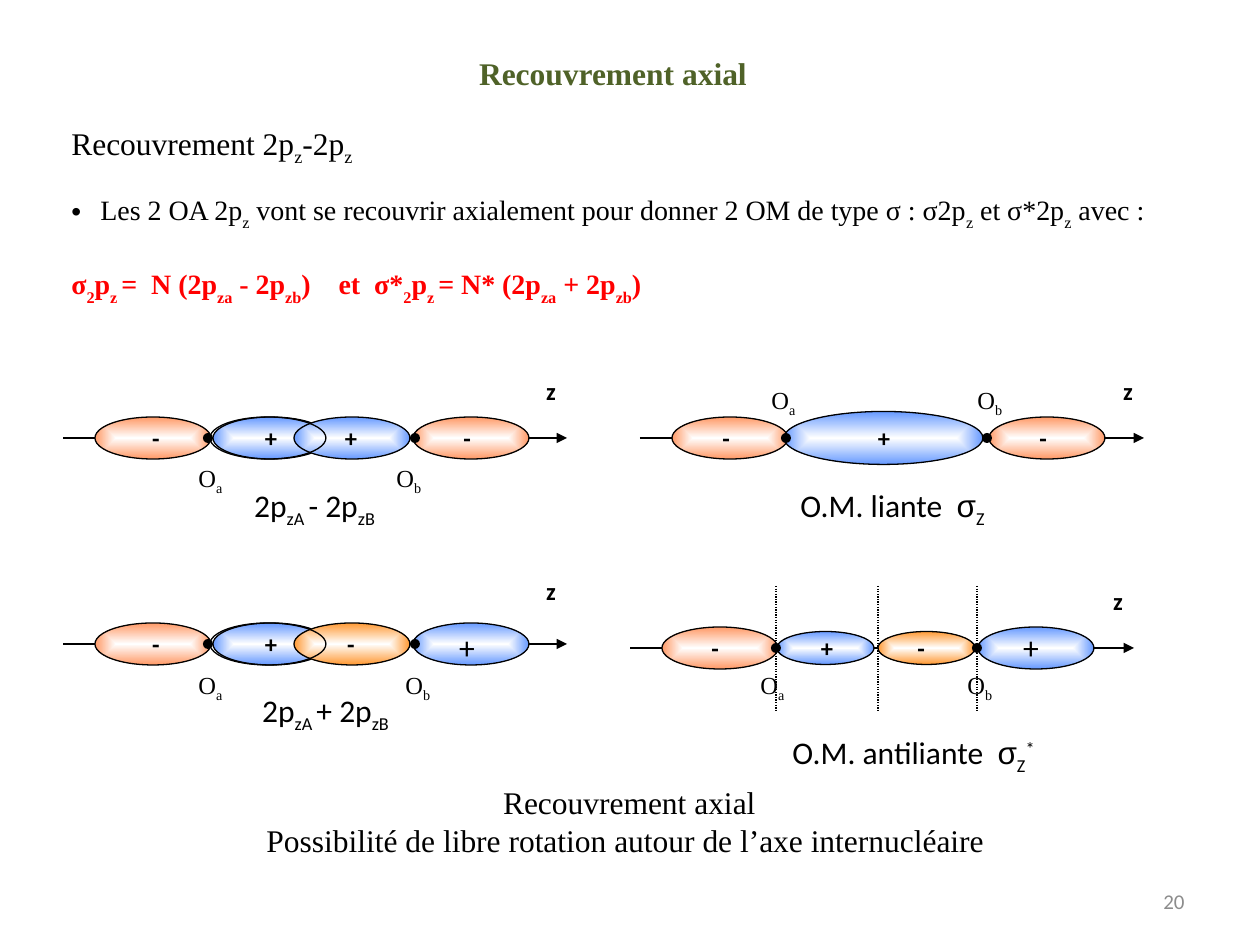
from lxml import etree
from pptx import Presentation
from pptx.dml.color import RGBColor
from pptx.enum.dml import MSO_LINE
from pptx.enum.shapes import MSO_CONNECTOR, MSO_SHAPE
from pptx.enum.text import MSO_ANCHOR, PP_ALIGN
from pptx.oxml.ns import qn
from pptx.util import Pt

PX = 914400 / 126
OVAL = MSO_SHAPE.OVAL
STRAIGHT = MSO_CONNECTOR.STRAIGHT
DOTTED = MSO_LINE.ROUND_DOT
LEFT, CENTER, RIGHT = PP_ALIGN.LEFT, PP_ALIGN.CENTER, PP_ALIGN.RIGHT
TOP, MIDDLE = MSO_ANCHOR.TOP, MSO_ANCHOR.MIDDLE
SERIF, SANS, GREEK = "Times New Roman", "Calibri", "Arial"
COLORS = {
    "black": "000000", "white": "FFFFFF", "title": "4F6228", "formula": "FF0000",
    "page number": "8C8C8C", "blue": "6699FF", "salmon": "FF9966", "orange": "FF9933",
}
AXIS_LENGTH = 504
LOBE = (116, 42)
SMALL_LOBE = (97, 33)
BONDING_LOBE = (199, 53)


def px(*lengths):
    return [round(length * PX) for length in lengths]


def rgb(name):
    return RGBColor.from_string(COLORS[name])


def with_subscripts(text, base=-25):
    """Split text at each bar into spans that alternate between normal and subscript."""
    return [(part, base if i % 2 else 0, None) for i, part in enumerate(text.split("|"))]


def fill_paragraph(para, spans, size, font=SERIF, color="black", bold=False, align=LEFT):
    para.alignment = align
    para.font.name = font
    para.font.size = Pt(size)
    para.font.bold = bold
    para.font.color.rgb = rgb(color)
    for text, base, own_font in spans:
        span = para.add_run()
        span.text = text
        if base:
            span.font._element.set("baseline", str(base * 1000))
        if own_font:
            span.font.name = own_font


def add_frame(shapes, place, wrap=True, anchor=TOP, side_inset=None):
    frame = shapes.add_textbox(*px(*place)).text_frame
    frame.word_wrap = wrap
    frame.vertical_anchor = anchor
    if side_inset is not None:
        frame.margin_left = frame.margin_right = side_inset
    return frame


def add_text(shapes, place, text, size, wrap=True, anchor=TOP, **style):
    """Add a one-paragraph box; text is a string with subscript bars or a list of spans."""
    frame = add_frame(shapes, place, wrap, anchor)
    spans = with_subscripts(text) if isinstance(text, str) else text
    fill_paragraph(frame.paragraphs[0], spans, size, **style)


def add_sign(shapes, center, top, text, size=14, bold=True):
    frame = add_frame(shapes, (center - 16, top, 32, 42), side_inset=0)
    fill_paragraph(frame.paragraphs[0], [(text, 0, None)], size, SANS, bold=bold, align=CENTER)


def add_ellipse(shapes, left, middle, size):
    width, height = size
    ellipse = shapes.add_shape(OVAL, *px(left, middle - height / 2, width, height))
    ellipse.shadow.inherit = False
    ellipse.line.color.rgb = rgb("black")
    ellipse.line.width = Pt(0.75)
    return ellipse


def add_lobe(shapes, left, middle, size, color):
    """Add an orbital lobe, white at its centre; without a color it is an outline."""
    lobe = add_ellipse(shapes, left, middle, size)
    if color is None:
        lobe.fill.background()
        return
    lobe.fill.gradient()
    for stop, name in zip(lobe.fill.gradient_stops, ("white", color)):
        stop.color.rgb = rgb(name)
    gradient = lobe._element.spPr.find(qn("a:gradFill"))
    gradient.remove(gradient.find(qn("a:lin")))
    shade = etree.SubElement(gradient, qn("a:path"), path="shape")
    etree.SubElement(shade, qn("a:fillToRect"), l="50000", t="50000", r="50000", b="50000")


def add_nucleus(shapes, center, middle):
    nucleus = add_ellipse(shapes, center - 5, middle, (10, 10))
    nucleus.fill.solid()
    nucleus.fill.fore_color.rgb = rgb("black")
    nucleus.line.fill.background()


def add_line(shapes, start, end, dash=None, arrow=False):
    connector = shapes.add_connector(STRAIGHT, *px(*start, *end))
    connector.line.color.rgb = rgb("black")
    connector.line.width = Pt(0.75)
    properties = connector._element.spPr
    if dash:
        connector.line.dash_style = dash
    if arrow:
        etree.SubElement(properties.find(qn("a:ln")), qn("a:tailEnd"), type="triangle")
    etree.SubElement(properties, qn("a:effectLst"))


def add_diagram(page, origin, lobes, nuclei, signs, caption_place, caption,
                big_plus=None, nodes=(), z_rise=68):
    """Draw orbitals along a z axis; horizontal positions count from the axis start."""
    left, middle = origin
    shapes = page.shapes.add_group_shape().shapes
    add_line(shapes, origin, (left + AXIS_LENGTH, middle), arrow=True)
    for offset, size, color in lobes:
        add_lobe(shapes, left + offset, middle, size, color)
    for offset in nuclei:
        add_nucleus(shapes, left + offset, middle)
    for offset, sign in signs:
        add_sign(shapes, left + offset, middle - 21, sign)
    if big_plus:
        offset, rise = big_plus
        add_sign(shapes, left + offset, middle - rise, "+", size=18, bold=False)
    for offset in nodes:
        add_line(shapes, (left + offset, middle - 62), (left + offset, middle + 64), DOTTED)
    add_sign(shapes, left + 488, middle - z_rise, "z")
    add_text(shapes, caption_place, caption, 18, font=SANS, align=CENTER)


def overlap_lobes(inner_right, outer_right):
    return [(150, LOBE, "blue"), (32, LOBE, "salmon"), (231, LOBE, inner_right),
            (350, LOBE, outer_right), (147, LOBE, None)]


def sigma_caption(name, *indices):
    return [(f"O.M. {name}  ", 0, None), ("σ", 0, GREEK), *indices]


def add_diagrams(page):
    add_diagram(page, (63, 438), overlap_lobes("blue", "salmon"), (145, 352),
                [(93, "-"), (208, "+"), (288, "+"), (404, "-")],
                (199, 480, 231, 50), "2p|zA |- 2p|zB")
    add_diagram(page, (63, 644), overlap_lobes("orange", "blue"), (145, 352),
                [(93, "-"), (208, "+"), (288, "-")],
                (210, 685, 231, 50), "2p|zA |+ 2p|zB", big_plus=(404, 22), z_rise=74)
    add_diagram(page, (640, 438),
                [(349, LOBE, "salmon"), (32, LOBE, "salmon"), (144, BONDING_LOBE, "blue")],
                (146, 347), [(86, "-"), (244, "+"), (403, "-")],
                (777, 480, 231, 50), sigma_caption("liante", ("Z", -25, None)))
    add_diagram(page, (630, 648),
                [(348, LOBE, "blue"), (32, LOBE, "salmon"),
                 (147, SMALL_LOBE, "blue"), (248, SMALL_LOBE, "orange")],
                (146, 347), [(85, "-"), (197, "+"), (291, "-")],
                (756, 727, 315, 50),
                sigma_caption("antiliante", ("Z", -25, None), ("*", 30, None)),
                big_plus=(401, 26), nodes=(146, 248, 347))


def add_nucleus_labels(page):
    for left_a, left_b, top in ((186, 384, 457), (759, 965, 379),
                                (186, 393, 664), (748, 955, 664)):
        add_text(page.shapes, (left_a, top, 108, 43), "O|a", 14)
        add_text(page.shapes, (left_b, top, 52, 43), "O|b", 14, wrap=False)


def add_explanation(page):
    frame = add_frame(page.shapes, (59, 186, 1162, 183))
    bullet = frame.paragraphs[0]
    fill_paragraph(bullet, with_subscripts(
        "Les 2 OA 2p|z| vont se recouvrir axialement pour donner 2 OM de type σ : "
        "σ2p|z| et σ*2p|z| avec :", -30), 16)
    properties = bullet._element.get_or_add_pPr()
    indent = px(29)[0]
    properties.set("marL", str(indent))
    properties.set("indent", str(-indent))
    properties.insert(0, etree.Element(qn("a:buFont"), typeface=GREEK))
    properties.insert(1, etree.Element(qn("a:buChar"), char="•"))
    formula = frame.add_paragraph()
    fill_paragraph(formula, with_subscripts(
        "σ|2|p|z |=  N (2p|za| - 2p|zb|)    et  σ*|2|p|z |= N* (2p|za| + 2p|zb|)", -30),
        16, color="formula", bold=True)
    formula.space_before = Pt(20)


def add_conclusion(page):
    frame = add_frame(page.shapes, (246, 777, 767, 89), wrap=False)
    lines = ("Recouvrement axial",
             "Possibilité de libre rotation autour de l’axe internucléaire ")
    for i, line in enumerate(lines):
        para = frame.add_paragraph() if i else frame.paragraphs[0]
        fill_paragraph(para, [(line, 0, None)], 18, align=CENTER)


def main():
    deck = Presentation()
    deck.slide_width, deck.slide_height = px(1260, 945)
    page = deck.slides.add_slide(deck.slide_layouts[6])
    add_text(page.shapes, (256, 48, 714, 50), "Recouvrement axial", 18,
             color="title", bold=True, align=CENTER)
    add_diagrams(page)
    add_text(page.shapes, (59, 118, 454, 50), "Recouvrement 2p|z|-2p|z", 18)
    add_conclusion(page)
    add_nucleus_labels(page)
    add_explanation(page)
    add_text(page.shapes, (903, 876, 294, 50), "20", 12, anchor=MIDDLE,
             font=SANS, color="page number", align=RIGHT)
    deck.save("out.pptx")


if __name__ == "__main__":
    main()
